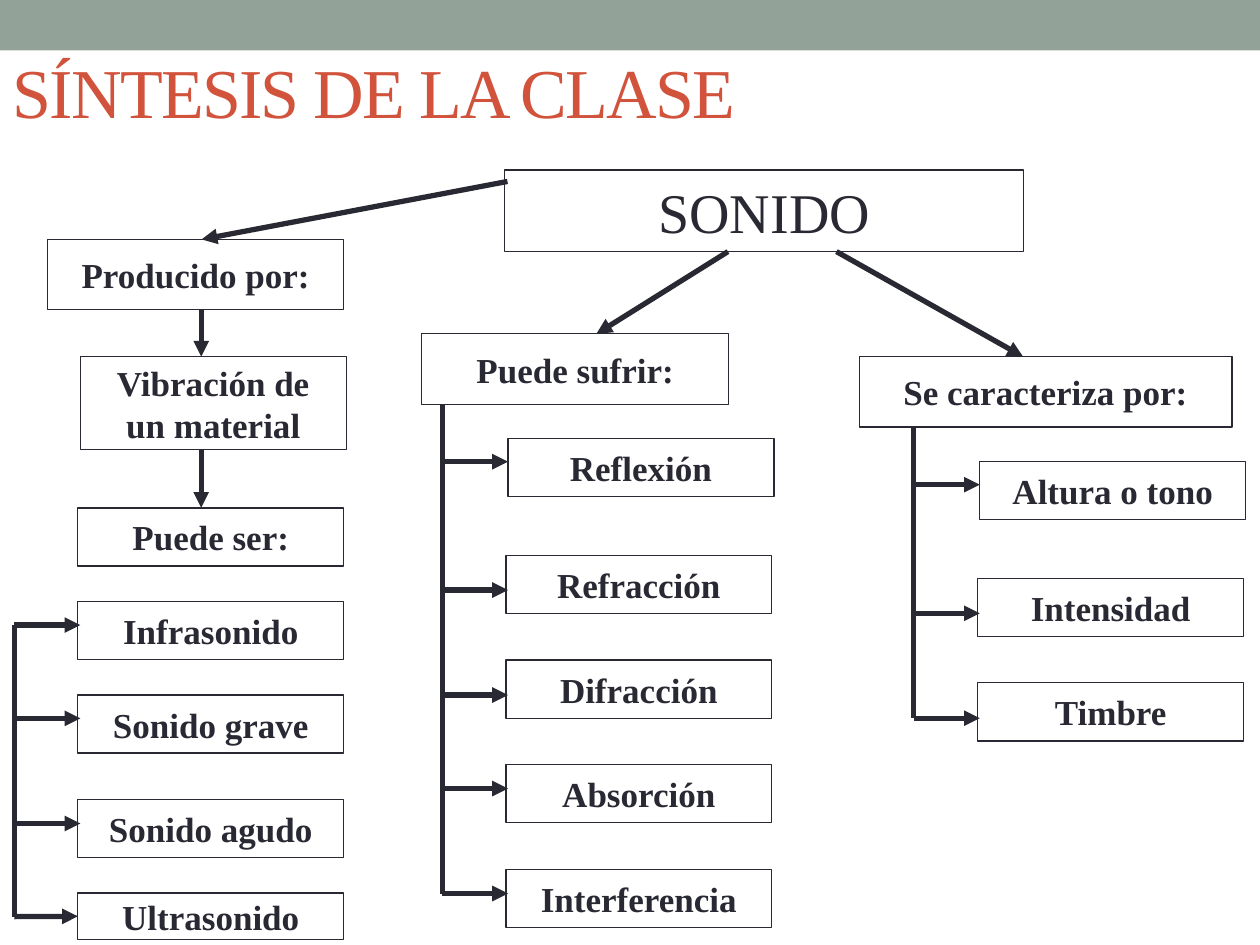
from lxml import etree
from pptx import Presentation
from pptx.dml.color import RGBColor
from pptx.enum.shapes import MSO_CONNECTOR, MSO_SHAPE
from pptx.enum.text import MSO_ANCHOR, MSO_AUTO_SIZE, PP_ALIGN
from pptx.oxml.ns import qn
from pptx.util import Pt

RECTANGLE = MSO_SHAPE.RECTANGLE
STRAIGHT = MSO_CONNECTOR.STRAIGHT
MIDDLE, BOTTOM = MSO_ANCHOR.MIDDLE, MSO_ANCHOR.BOTTOM
CENTER, LEFT = PP_ALIGN.CENTER, PP_ALIGN.LEFT
NO_AUTOFIT = MSO_AUTO_SIZE.NONE
LEFT_SIDE = 1

COLORS = {"ink": "292934", "title": "D2533C", "band": "93A299"}
FONT = "Times New Roman"
ITEM_W, ITEM_H = 152, 33.2
HEAD_H = 40.3


def color(key):
    return RGBColor.from_string(COLORS[key])


def write(shape, text, size=20, bold=True, ink="ink", align=CENTER,
          anchor=MIDDLE, wrap=False, spacing=None):
    """Fill a shape with text, one paragraph for each line."""
    frame = shape.text_frame
    frame.auto_size = NO_AUTOFIT
    frame.word_wrap = wrap
    frame.vertical_anchor = anchor
    for index, line in enumerate(text.split("\n")):
        paragraph = frame.add_paragraph() if index else frame.paragraphs[0]
        paragraph.alignment = align
        run = paragraph.add_run()
        run.text = line
        run.font.name = FONT
        run.font.size = Pt(size)
        run.font.bold = bold
        run.font.color.rgb = color(ink)
        if spacing is not None:
            run.font._element.set("spc", str(spacing))


def add_node(slide, text, box, **text_format):
    node = slide.shapes.add_shape(RECTANGLE, *(Pt(v) for v in box))
    node.shadow.inherit = False
    node.fill.background()
    node.line.color.rgb = color("ink")
    node.line.width = Pt(0.75)
    write(node, text, **text_format)
    return node


def add_line(slide, start, end, arrow=True):
    line = slide.shapes.add_connector(STRAIGHT, *(Pt(v) for v in start + end))
    line.line.color.rgb = color("ink")
    line.line.width = Pt(3)
    if arrow:
        etree.SubElement(line.line._get_or_add_ln(), qn("a:tailEnd"), type="triangle")
    etree.SubElement(line._element.spPr, qn("a:effectLst"))
    return line


def add_bracket(slide, box, spine_top, items):
    """Vertical spine at the box's left, with an arrow to each item.

    Each item is (text, left, top, height, arrow y), relative to the box.
    """
    left, top, width = box
    spine_bottom = top + items[-1][-1]
    add_line(slide, (left, top + spine_top), (left, spine_bottom), arrow=False)
    for text, item_left, item_top, height, arrow_y in items:
        node = add_node(slide, text, (left + item_left, top + item_top, ITEM_W, height))
        arrow = add_line(slide, (left, top + arrow_y), (left + width, top + arrow_y))
        if abs(item_top + height / 2 - arrow_y) < 1:
            arrow.end_connect(node, LEFT_SIDE)


def add_header(slide, box):
    left, top, width, height = box
    band = slide.shapes.add_shape(RECTANGLE, Pt(left), Pt(top), Pt(width), Pt(28.8))
    band.shadow.inherit = False
    band.fill.solid()
    band.fill.fore_color.rgb = color("band")
    band.line.fill.background()

    title = slide.shapes.title
    title.left, title.top = Pt(left), Pt(top + 6.5)
    title.width, title.height = Pt(width), Pt(height - 6.5)
    write(title, "SÍNTESIS DE LA CLASE", size=40, bold=False, ink="title",
          align=LEFT, anchor=BOTTOM, wrap=True, spacing=-100)


def add_root(slide, box):
    """Main concept with its arrows to the three branches."""
    left, top, width, height = box
    add_node(slide, "SONIDO", box, size=32, bold=False)
    base = top + height
    add_line(slide, (left + 1.5, top + 6.5), (115.2, 136.8))
    add_line(slide, (left + 127.5, base), (340.8, 190.8))
    add_line(slide, (left + 189.5, base), (584.6, 203.8))


def add_source_branch(slide, box):
    """What sound is produced by, and the kinds it can be."""
    left, top, width = box
    add_node(slide, "Producido por:", (left, top, width, HEAD_H))
    add_node(slide, "Vibración de\nun material", (left + 18.7, top + 67, ITEM_W, 53.2))
    add_node(slide, "Puede ser:", (left + 17.3, top + 153.4, ITEM_W, ITEM_H))
    for start, end in ((HEAD_H, 67), (120.2, 153.4)):
        add_line(slide, (left + 87.8, top + start), (left + 87.8, top + end))

    kinds = [("Infrasonido", 0, ITEM_H, 13.4), ("Sonido grave", 53.4, ITEM_H, 66.7),
             ("Sonido agudo", 113.2, ITEM_H, 126.8), ("Ultrasonido", 166.5, 26.6, 180)]
    add_bracket(slide, (left - 18.9, top + 207, 37.6), 13.4,
                [(text, 36.2, y, h, arrow_y) for text, y, h, arrow_y in kinds])


def add_listed_branch(slide, heading, box, spine, reach, items):
    """Heading with a bracket of items below it; the first is set 1 pt right."""
    left, top, width = box
    add_node(slide, heading, (left, top, width, HEAD_H))
    rows = []
    for index, (text, arrow_y) in enumerate(items):
        item_top = 59.8 if index == 0 else 66.8 + 59.8 * index
        item_left = reach if index == 0 else reach - 1.2
        rows.append((text, item_left, item_top, ITEM_H, arrow_y))
    add_bracket(slide, (left + spine, top, reach), HEAD_H, rows)


def main():
    prs = Presentation()
    prs.slide_width, prs.slide_height = Pt(720), Pt(540)
    slide = prs.slides.add_slide(prs.slide_layouts[5])

    add_header(slide, (0, 0, 720, 79.2))
    add_root(slide, (288.5, 97.2, 296.5, 46.6))
    add_source_branch(slide, (27.2, 136.8, 169.2))
    add_listed_branch(slide, "Puede sufrir:", (241, 190.8, 175.5), 11.8, 37.5, [
        ("Reflexión", 73), ("Refracción", 146.4), ("Difracción", 206.4),
        ("Absorción", 259.8), ("Interferencia", 319.8)])
    add_listed_branch(slide, "Se caracteriza por:", (491, 203.8, 213), 31.2, 37.7, [
        ("Altura o tono", 73.2), ("Intensidad", 146.7), ("Timbre", 206.6)])

    prs.save("out.pptx")


if __name__ == "__main__":
    main()
